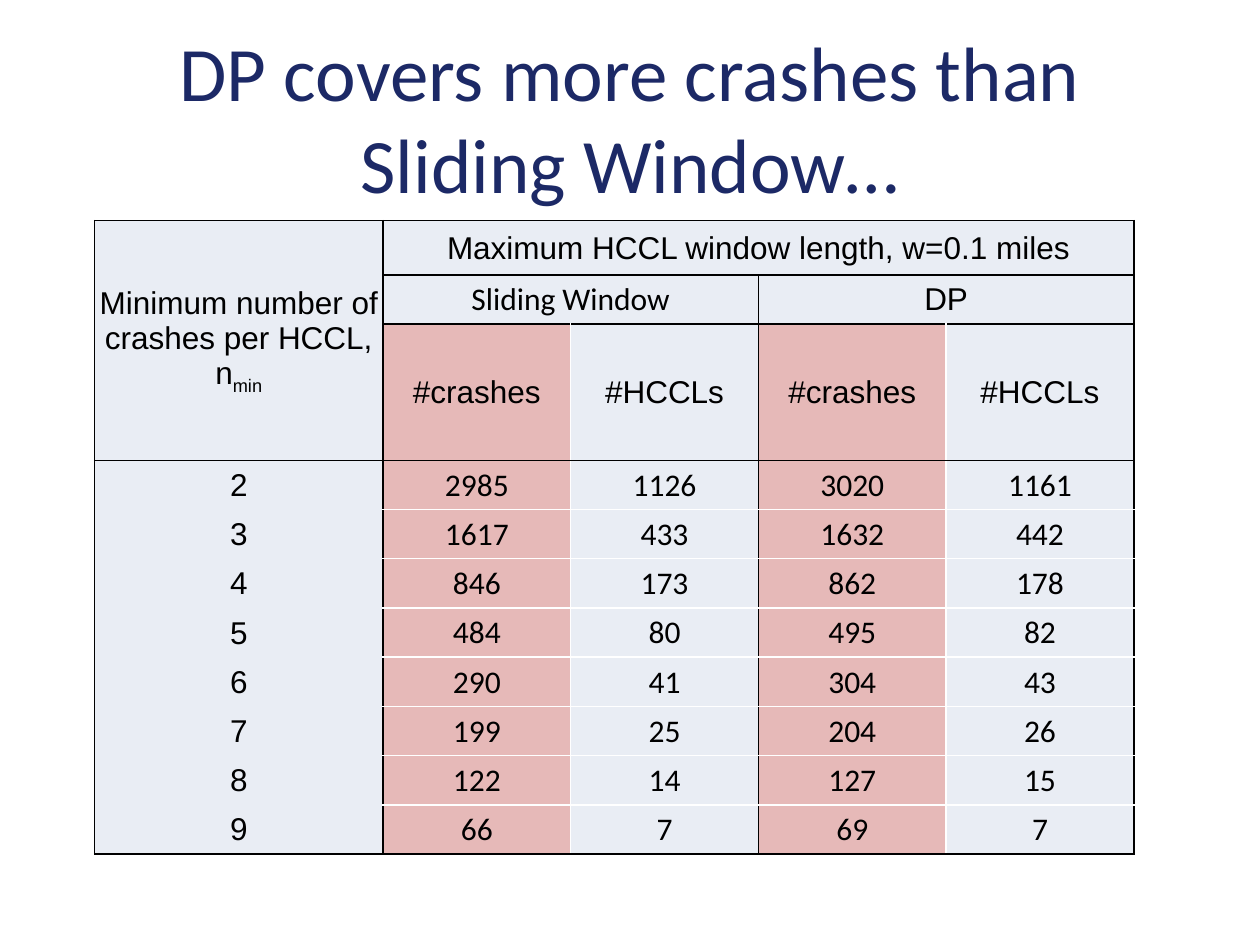
from lxml.etree import SubElement
from pptx import Presentation
from pptx.dml.color import RGBColor
from pptx.enum.text import MSO_ANCHOR as Anchor, PP_ALIGN as Align
from pptx.oxml.ns import qn
from pptx.util import Inches, Pt

BLACK, WHITE, NAVY = "000000", "FFFFFF", "1C2966"
PALE, ROSE = "E9EDF4", "E6B9B8"
COLUMN_WIDTHS = [2.29] + [1.49] * 4
ROW_HEIGHTS = [0.43, 0.39, 1.08] + [0.39] * 8
HEADER_ROWS = 3
LAST_ROW = len(ROW_HEIGHTS) - 1
MERGES = [((0, 0), (2, 0)), ((0, 1), (0, 4)), ((1, 1), (1, 2)), ((1, 3), (1, 4))]
HEADERS = {
    (0, 0): "Minimum number of crashes per HCCL, n",
    (0, 1): "Maximum HCCL window length, w=0.1 miles",
    (1, 1): "Sliding Window",
    (1, 3): "DP",
    (2, 1): "#crashes",
    (2, 2): "#HCCLs",
    (2, 3): "#crashes",
    (2, 4): "#HCCLs",
}
RESULTS = [
    (2, 2985, 1126, 3020, 1161),
    (3, 1617, 433, 1632, 442),
    (4, 846, 173, 862, 178),
    (5, 484, 80, 495, 82),
    (6, 290, 41, 304, 43),
    (7, 199, 25, 204, 26),
    (8, 122, 14, 127, 15),
    (9, 66, 7, 69, 7),
]


def color(value):
    return RGBColor.from_string(value)


def style_run(run, font, size, ink):
    run.font.name = font
    run.font.size = Pt(size)
    run.font.color.rgb = color(ink)


def border_colors(row, column):
    if row < HEADER_ROWS - 1 or (row < HEADER_ROWS and column == 0):
        return dict.fromkeys("LRTB", BLACK)
    inner = WHITE if column else None
    return {
        "L": BLACK if column in (0, 1, 3) else WHITE,
        "R": BLACK if column in (0, 2, 4) else WHITE,
        "T": BLACK if row <= HEADER_ROWS else inner,
        "B": BLACK if row in (HEADER_ROWS - 1, LAST_ROW) else inner,
    }


def draw_borders(cell, colors):
    properties = cell._tc.get_or_add_tcPr()
    for side, ink in colors.items():
        line = SubElement(properties, qn(f"a:ln{side}"), w=str(Pt(1)))
        if ink:
            fill = SubElement(line, qn("a:solidFill"))
            SubElement(fill, qn("a:srgbClr"), val=ink)
        else:
            SubElement(line, qn("a:noFill"))


def fill_cell(cell, row, column, text):
    draw_borders(cell, border_colors(row, column))
    cell.fill.solid()
    cell.fill.fore_color.rgb = color(ROSE if row >= 2 and column in (1, 3) else PALE)
    cell.vertical_anchor = Anchor.MIDDLE
    cell.margin_left = cell.margin_right = cell.margin_top = Inches(0.01)
    cell.margin_bottom = 0
    if cell.is_spanned:
        return
    paragraph = cell.text_frame.paragraphs[0]
    paragraph.text = text
    paragraph.alignment = Align.CENTER
    if (row, column) == (0, 0):
        subscript = paragraph.add_run()
        subscript.text = "min"
        subscript._r.get_or_add_rPr().set("baseline", "-25000")
    calibri = (row, column) == (1, 1) or (row >= HEADER_ROWS and column > 0)
    for run in paragraph.runs:
        style_run(run, "Calibri" if calibri else "Arial", 18, BLACK)


def add_title(slide, left, top, width, height):
    title = slide.shapes.add_textbox(left, top, width, height)
    frame = title.text_frame
    frame.word_wrap = True
    frame.vertical_anchor = Anchor.MIDDLE
    frame.text = "DP covers more crashes than Sliding Window…"
    frame.paragraphs[0].alignment = Align.CENTER
    style_run(frame.paragraphs[0].runs[0], "Calibri", 44, NAVY)


def add_results(slide, left, top, width, height):
    table = slide.shapes.add_table(
        len(ROW_HEIGHTS), len(COLUMN_WIDTHS), left, top, width, height
    ).table
    table.first_row = table.horz_banding = False
    for column, share in zip(table.columns, COLUMN_WIDTHS):
        column.width = int(width * share / sum(COLUMN_WIDTHS))
    for row, share in zip(table.rows, ROW_HEIGHTS):
        row.height = int(height * share / sum(ROW_HEIGHTS))
    for first, last in MERGES:
        table.cell(*first).merge(table.cell(*last))
    for row in range(len(ROW_HEIGHTS)):
        for column in range(len(COLUMN_WIDTHS)):
            if row < HEADER_ROWS:
                text = HEADERS.get((row, column), "")
            else:
                text = str(RESULTS[row - HEADER_ROWS][column])
            fill_cell(table.cell(row, column), row, column, text)


def main():
    deck = Presentation()
    deck.slide_width, deck.slide_height = Inches(10), Inches(7.5)
    slide = deck.slides.add_slide(deck.slide_layouts[6])
    add_results(slide, Inches(0.75), Inches(1.75), Inches(8.25), Inches(5.03))
    add_title(slide, Inches(0.5), Inches(0.3), Inches(9), Inches(1.25))
    deck.save("out.pptx")


if __name__ == "__main__":
    main()
